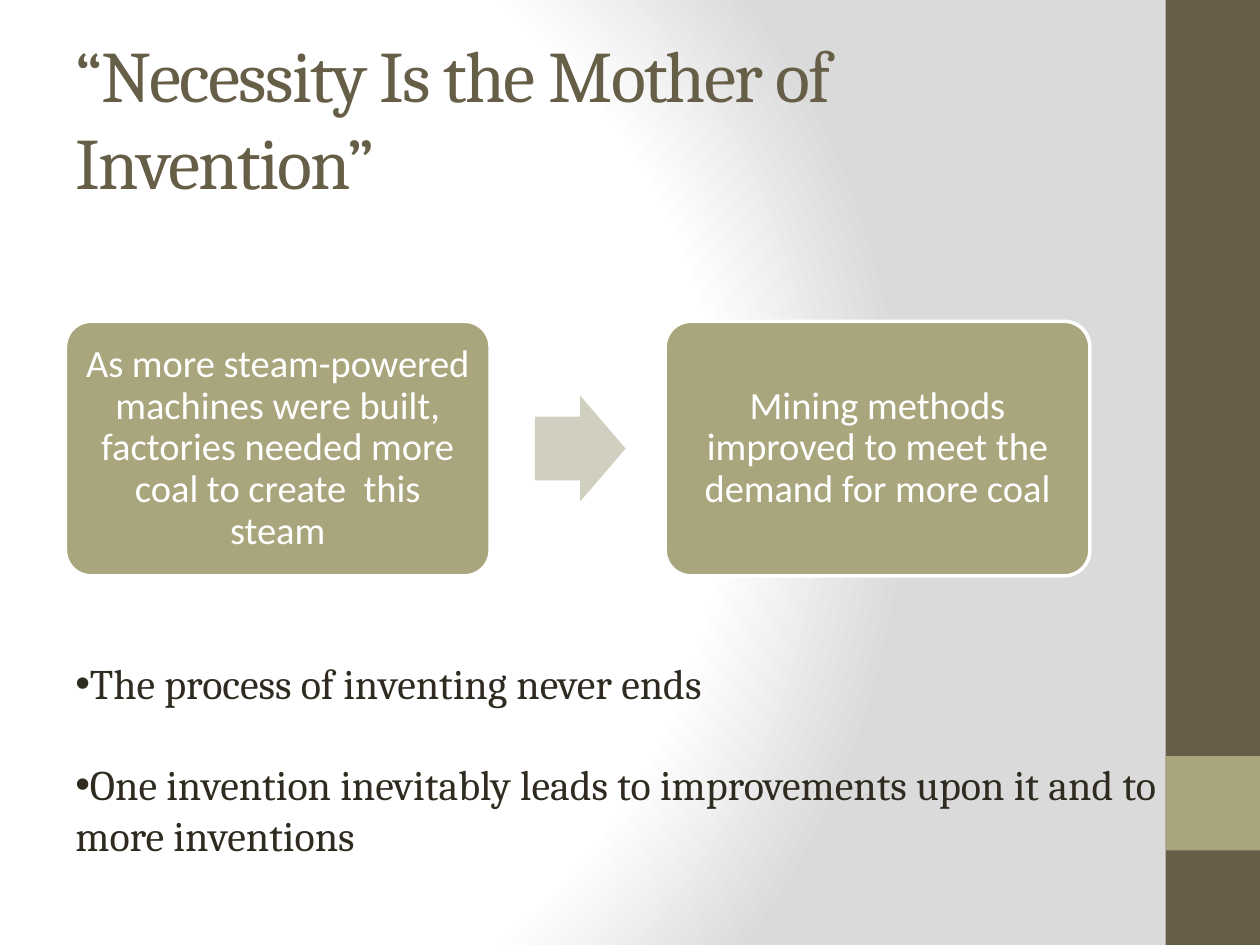
"""Builds the slide on necessity and invention."""
import pptx
import pptx.util
import pptx.dml.color
import pptx.enum.shapes
import pptx.enum.text
import pptx.oxml
import pptx.oxml.ns

Inches, Pt = pptx.util.Inches, pptx.util.Pt
SHAPE = pptx.enum.shapes.MSO_SHAPE
ALIGN = pptx.enum.text.PP_ALIGN
MIDDLE = pptx.enum.text.MSO_ANCHOR.MIDDLE

TITLE = "“Necessity Is the Mother of Invention”"
STEPS = [
    "As more steam-powered machines were built, factories needed more coal to create  this steam",
    "Mining methods improved to meet the demand for more coal",
]
LESSONS = [
    "The process of inventing never ends",
    "One invention inevitably leads to improvements upon it and to more inventions",
]
BROWN, OLIVE, PALE, INK, WHITE = "675E47", "A9A57C", "D1CFBF", "2F2B20", "FFFFFF"
BACKDROP = [(0, WHITE), (75, WHITE), (100, "DADADA")]
STEP_LEFT, STEP_TOP, STEP_WIDTH, STEP_HEIGHT, STEP_PITCH = 0.52, 2.55, 3.37, 2.02, 4.76
ARROW_WIDTH, ARROW_HEIGHT = 0.72, 0.84


def rgb(value):
    return pptx.dml.color.RGBColor.from_string(value)


def assign(target, values):
    for name, value in values.items():
        setattr(target, name, value)


def paint_background(slide):
    stops = "".join(
        f'<a:gs pos="{place * 1000}"><a:srgbClr val="{color}"/></a:gs>' for place, color in BACKDROP
    )
    background = pptx.oxml.parse_xml(
        f'<p:bg {pptx.oxml.ns.nsdecls("p", "a")}><p:bgPr><a:gradFill rotWithShape="1">'
        f'<a:gsLst>{stops}</a:gsLst><a:path path="circle">'
        '<a:fillToRect l="20000" t="50000" r="100000" b="50000"/></a:path>'
        "</a:gradFill><a:effectLst/></p:bgPr></p:bg>"
    )
    slide.element.cSld.insert(0, background)


def add_block(slide, kind, box, fill, line=None, adjustments=()):
    block = slide.shapes.add_shape(kind, *map(Inches, box))
    block.shadow.inherit = False
    block.fill.solid()
    block.fill.fore_color.rgb = rgb(fill)
    if line:
        block.line.color.rgb = rgb(line)
        block.line.width = Pt(2)
    else:
        block.line.fill.background()
    for index, value in enumerate(adjustments):
        block.adjustments[index] = value
    return block


def write(paragraph, text, font, size, color, **layout):
    run = paragraph.add_run()
    run.text = text
    assign(run.font, {"name": font, "size": Pt(size)})
    run.font.color.rgb = rgb(color)
    assign(paragraph, layout)
    return run


def add_title(slide):
    title = slide.shapes.title
    assign(title, dict(zip(("left", "top", "width", "height"), map(Inches, (0.5, 0.3, 8.33, 1.25)))))
    assign(title.text_frame, {"vertical_anchor": MIDDLE, "word_wrap": True})
    heading = write(title.text_frame.paragraphs[0], TITLE, "Cambria", 41.4, BROWN, alignment=ALIGN.LEFT)
    heading.font._element.set("spc", "-100")


def add_steps(slide):
    for index, text in enumerate(STEPS):
        left = STEP_LEFT + index * STEP_PITCH
        step = add_block(slide, SHAPE.ROUNDED_RECTANGLE, (left, STEP_TOP, STEP_WIDTH, STEP_HEIGHT),
                         OLIVE, WHITE, [0.1])
        margins = dict.fromkeys(("margin_left", "margin_right", "margin_top", "margin_bottom"), Inches(0.09))
        assign(step.text_frame, {"word_wrap": True, "vertical_anchor": MIDDLE, **margins})
        write(step.text_frame.paragraphs[0], text, "Calibri", 22, WHITE,
              alignment=ALIGN.CENTER, line_spacing=0.9)
    arrow_left = STEP_LEFT + (STEP_WIDTH + STEP_PITCH - ARROW_WIDTH) / 2 + 0.02
    arrow_top = STEP_TOP + (STEP_HEIGHT - ARROW_HEIGHT) / 2
    add_block(slide, SHAPE.RIGHT_ARROW, (arrow_left, arrow_top, ARROW_WIDTH, ARROW_HEIGHT),
              PALE, adjustments=[0.6, 0.5])


def add_lessons(slide):
    lessons = slide.shapes.add_textbox(*map(Inches, (0.5, 5.17, 9, 1.72))).text_frame
    lessons.word_wrap = True
    for index, text in enumerate(LESSONS):
        paragraph = lessons.add_paragraph() if index else lessons.paragraphs[0]
        write(paragraph, text, "Cambria", 24, INK, space_before=Pt(29 if index else 0))
        properties = paragraph._p.get_or_add_pPr()
        for bullet in ('<a:buFont {} typeface="Arial"/>', '<a:buChar {} char="•"/>'):
            properties.append(pptx.oxml.parse_xml(bullet.format(pptx.oxml.ns.nsdecls("a"))))


def main():
    deck = pptx.Presentation()
    assign(deck, {"slide_width": Inches(10), "slide_height": Inches(7.5)})
    slide = deck.slides.add_slide(deck.slide_layouts[5])
    paint_background(slide)
    add_block(slide, SHAPE.RECTANGLE, (9.25, 0, 0.75, 7.5), BROWN)
    add_block(slide, SHAPE.RECTANGLE, (9.25, 6, 0.75, 0.75), OLIVE)
    add_title(slide)
    add_steps(slide)
    add_lessons(slide)
    deck.save("out.pptx")


if __name__ == "__main__":
    main()
